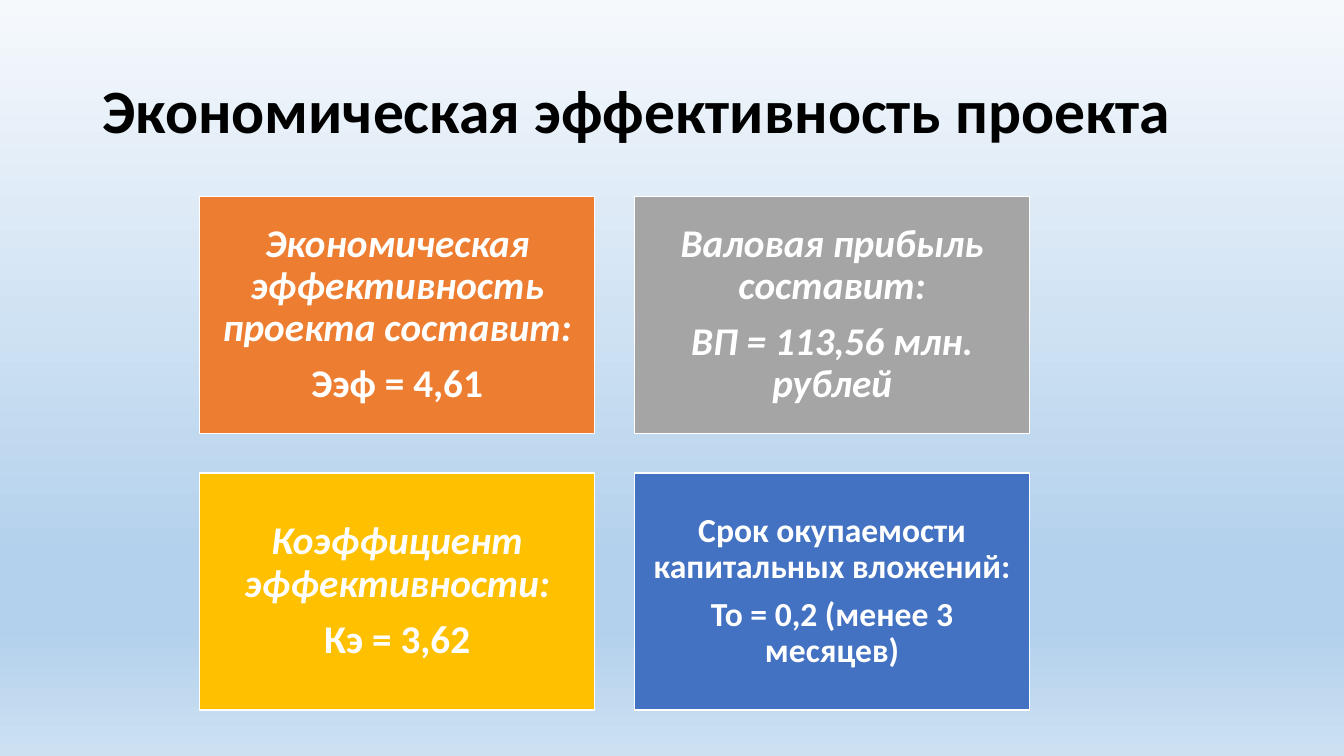
from pptx import Presentation
from pptx.dml.color import RGBColor
from pptx.enum import shapes, text
from pptx.oxml import parse_xml
from pptx.oxml import ns
from pptx.util import Cm, Pt

COLORS = {
    "black": "000000",
    "white": "FFFFFF",
    "orange": "ED7D31",
    "gray": "A5A5A5",
    "yellow": "FFC000",
    "blue": "4372C3",
}
BACKGROUND_STOPS = [(0, "F6F9FC"), (74, "B3D1EC"), (83, "B3D1EC"), (100, "CCE0F2")]
CARDS = [
    ("orange", 28, 0.3, [("Экономическая эффективность проекта составит:", True),
                         ("Ээф = 4,61", False)]),
    ("gray", 28, 0.3, [("Валовая прибыль составит:", True),
                       ("ВП = 113,56 млн. рублей", True)]),
    ("yellow", 28, 0.3, [("Коэффициент эффективности:", True),
                         ("Кэ = 3,62", False)]),
    ("blue", 24, 0.25, [("Срок окупаемости капитальных вложений:", False),
                        ("То = 0,2 (менее 3 месяцев)", False)]),
]


def color(name):
    return RGBColor.from_string(COLORS[name])


def apply(target, values):
    for name, value in values.items():
        setattr(target, name, value)


def format_paragraph(paragraph, alignment, space_before, size, color_name, italic=False):
    apply(paragraph, {"alignment": alignment, "line_spacing": 0.9,
                      "space_before": Pt(space_before)})
    for run in paragraph.runs:
        apply(run.font, {"name": "Calibri", "size": Pt(size), "bold": True,
                         "italic": italic})
        run.font.color.rgb = color(color_name)


def paint_background(slide):
    fill = slide.background.fill
    fill.gradient()
    fill.gradient_angle = 270
    stops = "".join(
        f'<a:gs pos="{position * 1000}"><a:srgbClr val="{value}"/></a:gs>'
        for position, value in BACKGROUND_STOPS)
    stop_list = slide.background._cSld.find(".//" + ns.qn("a:gsLst"))
    stop_list.getparent().replace(
        stop_list, parse_xml(f'<a:gsLst {ns.nsdecls("a")}>{stops}</a:gsLst>'))


def place_title(slide, left, top, width, height):
    title = slide.shapes.title
    apply(title, {"left": Cm(left), "top": Cm(top),
                  "width": Cm(width), "height": Cm(height)})
    frame = title.text_frame
    frame.text = "Экономическая эффективность проекта"
    apply(frame, {"vertical_anchor": text.MSO_ANCHOR.MIDDLE, "word_wrap": True,
                  "auto_size": text.MSO_AUTO_SIZE.NONE})
    format_paragraph(frame.paragraphs[0], text.PP_ALIGN.LEFT, 0, 44, "black")


def add_card(slide, left, top, width, height, card):
    fill_name, size, margin, lines = card
    shape = slide.shapes.add_shape(shapes.MSO_SHAPE.RECTANGLE, Cm(left), Cm(top),
                                   Cm(width), Cm(height))
    shape.shadow.inherit = False
    shape.fill.solid()
    shape.fill.fore_color.rgb = color(fill_name)
    shape.line.color.rgb = color("white")
    shape.line.width = Pt(1)
    frame = shape.text_frame
    apply(frame, {"vertical_anchor": text.MSO_ANCHOR.MIDDLE, "word_wrap": True})
    apply(frame, {f"margin_{side}": Cm(margin)
                  for side in ("left", "top", "right", "bottom")})
    for index, (line, italic) in enumerate(lines):
        paragraph = frame.paragraphs[0] if index == 0 else frame.add_paragraph()
        paragraph.add_run().text = line
        format_paragraph(paragraph, text.PP_ALIGN.CENTER, 0.35 * size * index,
                         size, "white", italic)


def add_card_grid(slide, left, top, width, height, gap=1, columns=2):
    rows = len(CARDS) // columns
    card_width = (width - gap * (columns - 1)) / columns
    card_height = (height - gap * (rows - 1)) / rows
    for index, card in enumerate(CARDS):
        row, column = divmod(index, columns)
        add_card(slide, left + column * (card_width + gap),
                 top + row * (card_height + gap), card_width, card_height, card)


def main():
    presentation = Presentation()
    apply(presentation, {"slide_width": Cm(33.87), "slide_height": Cm(19.05)})
    slide = presentation.slides.add_slide(presentation.slide_layouts.get_by_name("Title Only"))
    paint_background(slide)
    place_title(slide, 2.33, 1.01, 29.21, 3.68)
    add_card_grid(slide, 5.03, 4.95, 20.92, 12.94)
    presentation.save("out.pptx")


if __name__ == "__main__":
    main()
